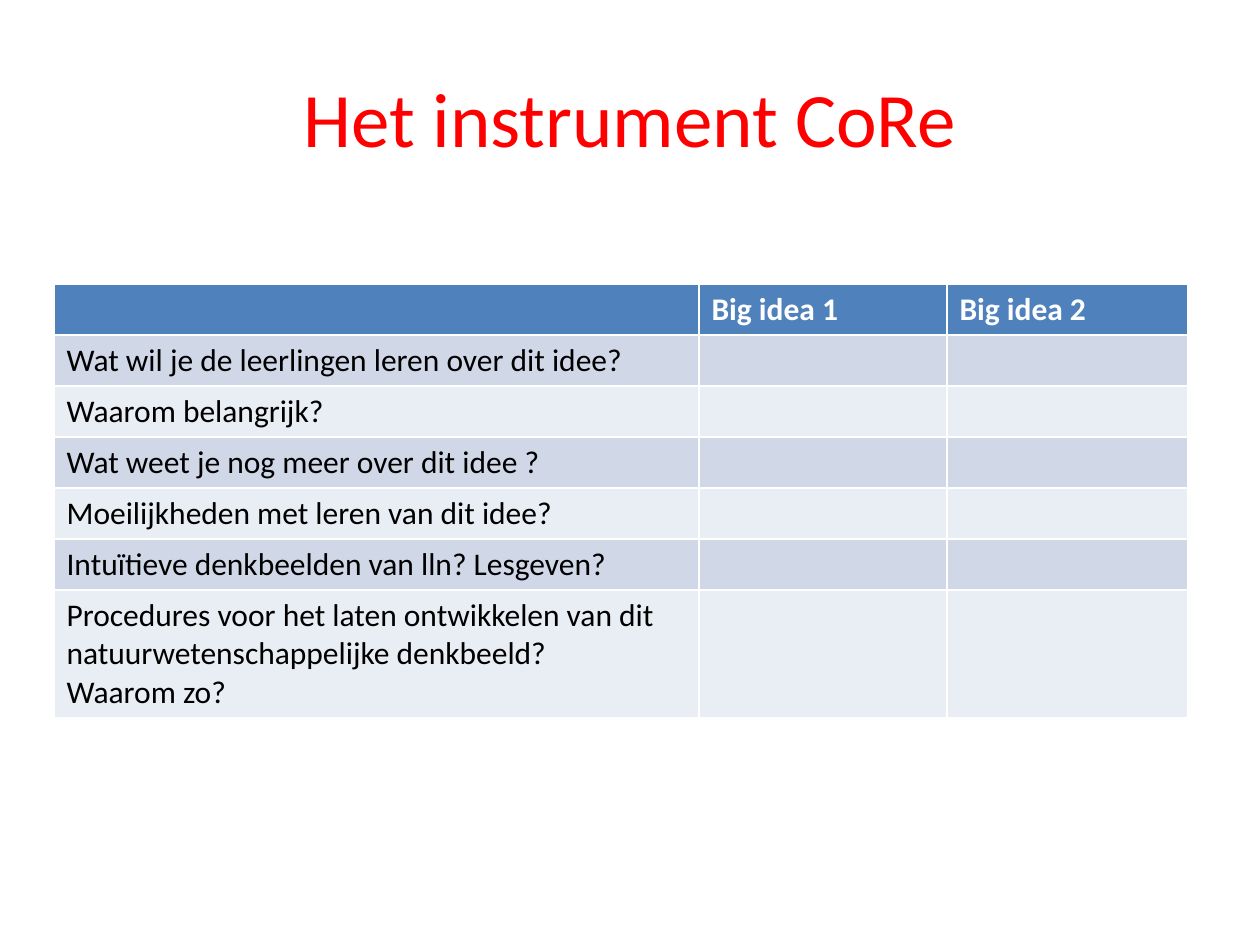
from pptx import Presentation
from pptx.dml.color import RGBColor
from pptx.enum.text import MSO_ANCHOR, PP_ALIGN
from pptx.util import Pt

PX = 914400 // 126
LEFT, CENTER = PP_ALIGN.LEFT, PP_ALIGN.CENTER
MIDDLE = MSO_ANCHOR.MIDDLE

RED = RGBColor(0xFF, 0x00, 0x00)
WHITE = RGBColor(0xFF, 0xFF, 0xFF)
BLACK = RGBColor(0x00, 0x00, 0x00)
BLUE = RGBColor(0x4F, 0x81, 0xBD)
BANDS = [RGBColor(0xE9, 0xED, 0xF4), RGBColor(0xD0, 0xD8, 0xE8)]

ROWS = [
    ["", "Big idea 1", "Big idea 2"],
    ["Wat wil je de leerlingen leren over dit idee?", "", ""],
    ["Waarom belangrijk?", "", ""],
    ["Wat weet je nog meer over dit idee ?", "", ""],
    ["Moeilijkheden met leren van dit idee?", "", ""],
    ["Intuïtieve denkbeelden van lln? Lesgeven?", "", ""],
    ["Procedures voor het laten ontwikkelen van dit "
     "natuurwetenschappelijke denkbeeld?\nWaarom zo?", "", ""],
]
WIDTHS = [645, 248, 241]
HEIGHTS = [51] * 6 + [128]


def write(frame, text, size=18, color=BLACK, bold=False, align=LEFT):
    frame.text = text
    for para in frame.paragraphs:
        para.alignment = align
        para.font.size = Pt(size)
        for run in para.runs:
            run.font.name = "Calibri"
            run.font.size = Pt(size)
            run.font.bold = bold
            run.font.color.rgb = color


prs = Presentation()
prs.slide_width, prs.slide_height = 1260 * PX, 945 * PX
slide = prs.slides.add_slide(prs.slide_layouts[6])

title = slide.shapes.add_textbox(63 * PX, 38 * PX, 1134 * PX, 158 * PX).text_frame
title.word_wrap = True
title.vertical_anchor = MIDDLE
write(title, "Het instrument CoRe", size=44, color=RED, align=CENTER)

table = slide.shapes.add_table(
    len(ROWS), len(WIDTHS), 54 * PX, 284 * PX,
    sum(WIDTHS) * PX, sum(HEIGHTS) * PX).table
for col, width in zip(table.columns, WIDTHS):
    col.width = width * PX
for r, texts in enumerate(ROWS):
    table.rows[r].height = HEIGHTS[r] * PX
    head = r == 0
    for c, text in enumerate(texts):
        cell = table.cell(r, c)
        cell.fill.solid()
        cell.fill.fore_color.rgb = BLUE if head else BANDS[r % 2]
        write(cell.text_frame, text, color=WHITE if head else BLACK, bold=head)

prs.save("out.pptx")
